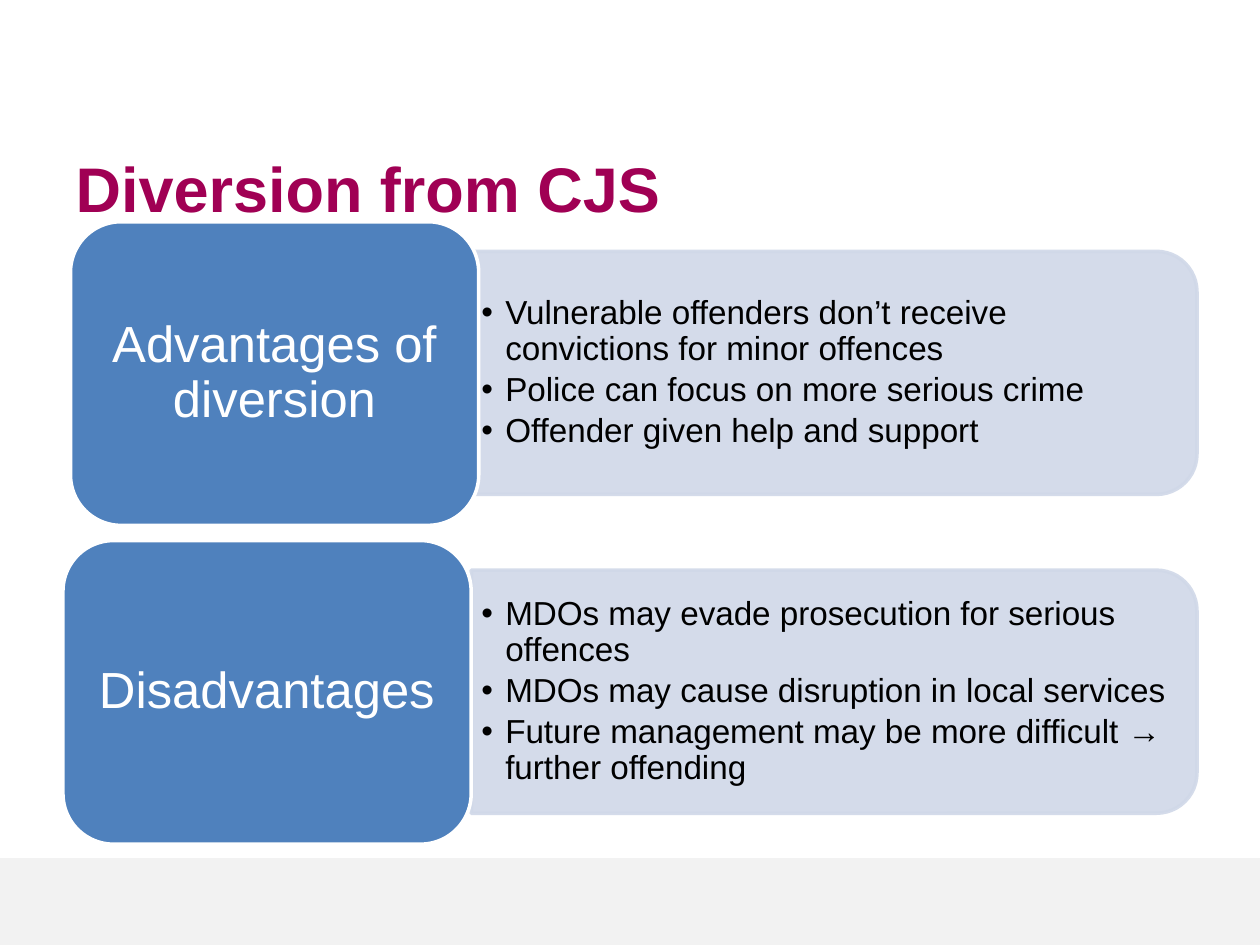
from lxml.etree import SubElement
from pptx import Presentation
from pptx.dml.color import RGBColor
from pptx.enum.shapes import MSO_SHAPE
from pptx.enum.text import MSO_ANCHOR, MSO_AUTO_SIZE, PP_ALIGN
from pptx.oxml.ns import qn
from pptx.util import Inches, Pt

COLORS = {
    "title": "A00054",
    "card": "4F81BD",
    "panel": "D0D8E8",
    "band": "F2F2F2",
    "white": "FFFFFF",
    "black": "000000",
}
TOPICS = [
    ("Advantages of diversion", 0.56, [
        "Vulnerable offenders don’t receive convictions for minor offences",
        "Police can focus on more serious crime",
        "Offender given help and support",
    ]),
    ("Disadvantages", 0.5, [
        "MDOs may evade prosecution for serious offences",
        "MDOs may cause disruption in local services",
        "Future management may be more difficult → further offending",
    ]),
]
FIRST_CENTER = 2.96
ROW_STEP = 2.53


def color(name):
    return RGBColor.from_string(COLORS[name])


def place(box, left, top, width, height):
    box.left, box.top = Inches(left), Inches(top)
    box.width, box.height = Inches(width), Inches(height)


def add_bullet(para, indent):
    properties = para._p.get_or_add_pPr()
    properties.set("marL", str(Inches(indent)))
    properties.set("indent", str(-Inches(indent)))
    SubElement(properties, qn("a:buChar"), char="•")


def write_text(box, lines, *, size, ink, bold=False, align=PP_ALIGN.LEFT,
               insets=(0.1, 0.05), spacing=1.0, after=0, bullet_indent=None):
    frame = box.text_frame
    frame.word_wrap = True
    frame.auto_size = MSO_AUTO_SIZE.NONE
    frame.vertical_anchor = MSO_ANCHOR.MIDDLE
    frame.margin_left = frame.margin_right = Inches(insets[0])
    frame.margin_top = frame.margin_bottom = Inches(insets[1])
    for index, line in enumerate(lines):
        para = frame.add_paragraph() if index else frame.paragraphs[0]
        if bullet_indent:
            para.level = 1
            add_bullet(para, bullet_indent)
        para.alignment = align
        para.line_spacing = spacing
        para.space_before = Pt(0)
        para.space_after = Pt(after)
        span = para.add_run()
        span.text = line
        span.font.name = "Arial"
        span.font.size = Pt(size)
        span.font.bold = bold
        span.font.color.rgb = color(ink)


def add_block(page, preset, left, top, width, height, fill, line=None):
    block = page.shapes.add_shape(preset, Inches(left), Inches(top),
                                  Inches(width), Inches(height))
    block.shadow.inherit = False
    block.fill.solid()
    block.fill.fore_color.rgb = color(fill)
    if line:
        block.line.color.rgb = color(line)
        block.line.width = Pt(2)
    else:
        block.line.fill.background()
    return block


def add_panel(page, center):
    width, height = 1.93, 5.76
    panel = add_block(page, MSO_SHAPE.ROUND_2_SAME_RECTANGLE, 6.62 - width / 2,
                      center - height / 2, width, height, "panel", "panel")
    panel.rotation = 90
    for fill_color in panel._element.spPr.iter(qn("a:srgbClr")):
        SubElement(fill_color, qn("a:alpha"), val="90000")


def add_list(page, box, center, lines):
    page.shapes._spTree.append(box._element)
    place(box, 3.74, center - 0.87, 5.67, 1.74)
    write_text(box, lines, size=19, ink="black", insets=(0.08, 0.04),
               spacing=0.9, after=3, bullet_indent=0.19)


def add_card(page, left, center, label):
    card = add_block(page, MSO_SHAPE.ROUNDED_RECTANGLE, left, center - 1.2,
                     3.24, 2.41, "card", "white")
    write_text(card, [label], size=29, ink="white", align=PP_ALIGN.CENTER,
               insets=(0.12, 0.06), spacing=0.9)


def main():
    deck = Presentation()
    deck.slide_width, deck.slide_height = Inches(10), Inches(7.5)
    page = deck.slides.add_slide(deck.slide_layouts.get_by_name("Two Content"))
    add_block(page, MSO_SHAPE.RECTANGLE, 0, 6.81, 10, 0.69, "band")

    title = page.shapes.title
    place(title, 0.5, 1.12, 8.5, 0.74)
    write_text(title, ["Diversion from CJS"], size=36, ink="title", bold=True)

    for row, (label, left, lines) in enumerate(TOPICS):
        center = FIRST_CENTER + row * ROW_STEP
        add_panel(page, center)
        add_list(page, page.placeholders[row + 1], center, lines)
        add_card(page, left, center, label)

    deck.save("out.pptx")


if __name__ == "__main__":
    main()
